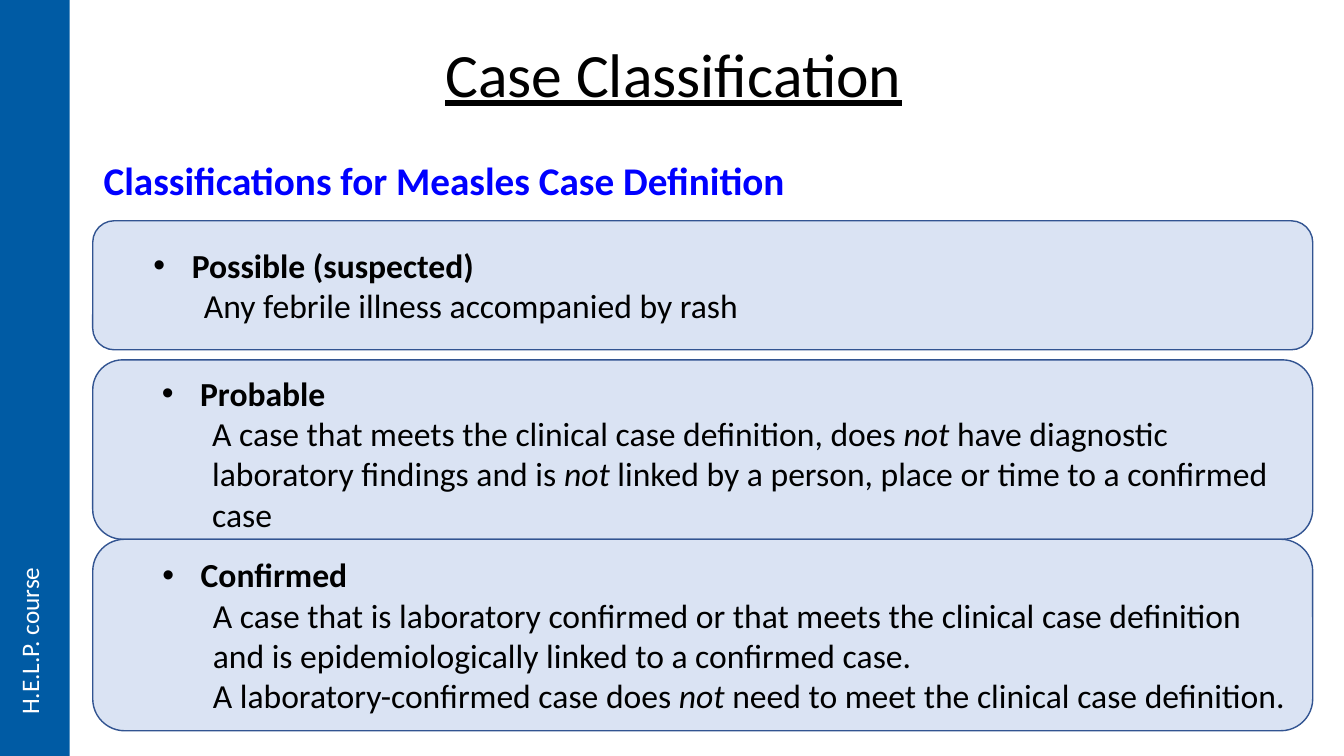
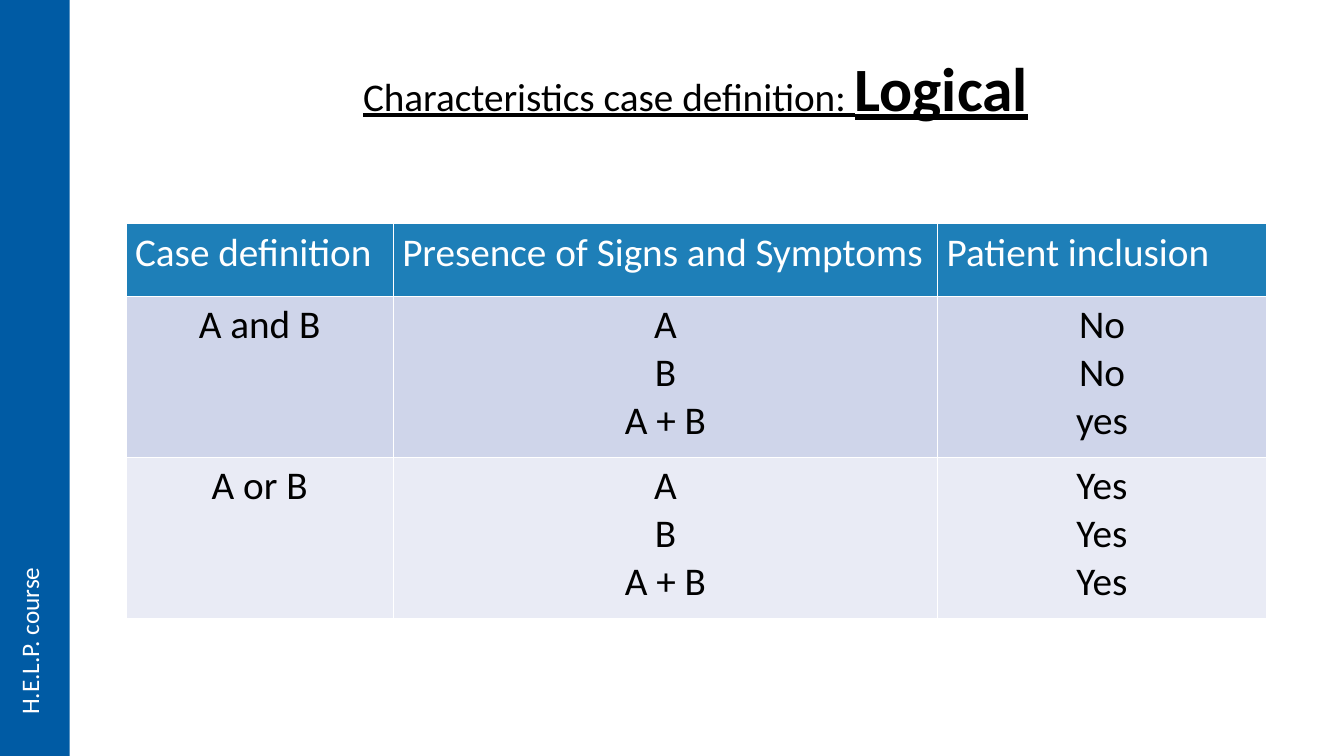
from dataclasses import dataclass

from lxml.etree import SubElement
from pptx import Presentation
from pptx.dml.color import RGBColor
from pptx.enum.shapes import MSO_SHAPE
from pptx.enum.text import MSO_ANCHOR, PP_ALIGN
from pptx.oxml.ns import qn
from pptx.util import Inches, Pt


@dataclass(frozen=True)
class Theme:
    font: str = "Calibri"
    band: str = "005BA4"
    black: str = "000000"
    white: str = "FFFFFF"
    heading: str = "0000FF"
    card: str = "DAE3F3"
    card_line: str = "325491"
    table_header: str = "1E7FB8"
    table_rows: tuple = ("CFD5EA", "E9EBF5")
    title_size: int = 44
    large_size: int = 28
    body_size: int = 24
    course_size: int = 18


class Deck:
    def __init__(self, theme):
        self.theme = theme
        self.deck = Presentation()
        self.deck.slide_width = Inches(13.33)
        self.deck.slide_height = Inches(7.5)
        self.page = None

    # Shared page frame
    def add_page(self):
        self.page = self.deck.slides.add_slide(self.deck.slide_layouts[6])
        band = self.shape(MSO_SHAPE.RECTANGLE, 0, 0, 0.69, 7.5, self.theme.band)
        band.line.fill.background()
        course = self.text_box(0.09, 5.61, 0.5, 1.58, "H.E.L.P. course",
                               self.theme.course_size, self.theme.white)
        course.text_frame._txBody.bodyPr.set("vert", "vert270")

    def style(self, para, size, color, bold=False):
        para.font.name = self.theme.font
        para.font.size = Pt(size)
        para.font.bold = bold
        para.font.color.rgb = RGBColor.from_string(color)

    def shape(self, kind, left, top, width, height, fill):
        shape = self.page.shapes.add_shape(
            kind, Inches(left), Inches(top), Inches(width), Inches(height))
        shape.shadow.inherit = False
        shape.fill.solid()
        shape.fill.fore_color.rgb = RGBColor.from_string(fill)
        return shape

    def text_box(self, left, top, width, height, text, size, color,
                 bold=False, wrap=False):
        box = self.page.shapes.add_textbox(
            Inches(left), Inches(top), Inches(width), Inches(height))
        box.text_frame.word_wrap = wrap
        para = box.text_frame.paragraphs[0]
        para.text = text
        self.style(para, size, color, bold)
        return box

    # Underlined title, with an optional larger bold ending
    def title(self, left, top, text, size, emphasis=""):
        box = self.text_box(left, top, 11.5, 1.45, text, size,
                            self.theme.black, wrap=True)
        box.text_frame.vertical_anchor = MSO_ANCHOR.MIDDLE
        para = box.text_frame.paragraphs[0]
        para.alignment = PP_ALIGN.CENTER
        para.line_spacing = 0.9
        para.font.underline = True
        if emphasis:
            span = para.add_run()
            span.text = emphasis
            span.font.size = Pt(self.theme.title_size)
            span.font.bold = True

    # Rounded card: bulleted term above its definition; *marks* set italics
    def card(self, top, height, term, definitions, margin_left=0.1, margin_top=0.05):
        card = self.shape(MSO_SHAPE.ROUNDED_RECTANGLE, 0.92, top, 12.1, height,
                          self.theme.card)
        card.line.color.rgb = RGBColor.from_string(self.theme.card_line)
        card.line.width = Pt(1)
        frame = card.text_frame
        frame.word_wrap = True
        frame.vertical_anchor = MSO_ANCHOR.MIDDLE
        frame.margin_left = Inches(margin_left)
        frame.margin_top = Inches(margin_top)
        para = frame.paragraphs[0]
        para.text = term
        self.indent(para, 0.88, -0.38, bullet="•")
        self.style(para, self.theme.body_size, self.theme.black, bold=True)
        for definition in definitions:
            para = frame.add_paragraph()
            self.indent(para, 1, 0)
            self.style(para, self.theme.body_size, self.theme.black)
            for index, words in enumerate(definition.split("*")):
                span = para.add_run()
                span.text = words
                if index % 2:
                    span.font.italic = True

    def indent(self, para, margin, first_line, bullet=None):
        para.alignment = PP_ALIGN.LEFT
        properties = para._p.get_or_add_pPr()
        properties.set("marL", str(Inches(margin)))
        properties.set("indent", str(Inches(first_line)))
        if bullet:
            SubElement(properties, qn("a:buFont"), typeface="Arial")
            SubElement(properties, qn("a:buChar"), char=bullet)

    # Table with a coloured header; line breaks separate paragraphs
    def table(self, left, top, widths, heights, rows):
        table = self.page.shapes.add_table(
            len(rows), len(widths), Inches(left), Inches(top),
            Inches(sum(widths)), Inches(sum(heights))).table
        for column, width in zip(table.columns, widths):
            column.width = Inches(width)
        for index, (row, height) in enumerate(zip(rows, heights)):
            table.rows[index].height = Inches(height)
            for cell, text in zip(table.rows[index].cells, row):
                self.cell(cell, text, index)

    def cell(self, cell, text, row):
        theme = self.theme
        if row == 0:
            fill, color, alignment = theme.table_header, theme.white, PP_ALIGN.LEFT
        else:
            fill = theme.table_rows[(row - 1) % 2]
            color, alignment = theme.black, PP_ALIGN.CENTER
        cell.margin_left = cell.margin_right = Inches(0.09)
        cell.margin_top = cell.margin_bottom = Inches(0.05)
        properties = cell._tc.get_or_add_tcPr()
        for side in ("lnL", "lnR", "lnT", "lnB"):
            border = SubElement(properties, qn(f"a:{side}"), w=str(Pt(1)))
            solid = SubElement(border, qn("a:solidFill"))
            SubElement(solid, qn("a:srgbClr"), val=theme.white)
        cell.fill.solid()
        cell.fill.fore_color.rgb = RGBColor.from_string(fill)
        cell.text = text
        for para in cell.text_frame.paragraphs:
            para.alignment = alignment
            self.style(para, theme.large_size, color)


def main():
    theme = Theme()
    deck = Deck(theme)

    # Case classification
    deck.add_page()
    deck.title(0.93, 0.04, "Case Classification", theme.title_size)
    deck.text_box(0.93, 1.5, 7.05, 0.57, "Classifications for Measles Case Definition",
                  theme.large_size, theme.heading, bold=True)
    deck.card(2.19, 1.28, "Possible (suspected)",
              ["Any febrile illness accompanied by rash"], margin_left=0.04)
    deck.card(3.57, 1.78, "Probable",
              ["A case that meets the clinical case definition, does *not* have "
               "diagnostic laboratory findings and is *not* linked by a person, "
               "place or time to a confirmed case"], margin_top=0.12)
    deck.card(5.35, 1.9, "Confirmed",
              ["A case that is laboratory confirmed or that meets the clinical case "
               "definition and is epidemiologically linked to a confirmed case.",
               "A laboratory-confirmed case does *not* need to meet the clinical "
               "case definition."])

    # Logical case definitions
    deck.add_page()
    deck.title(1.15, 0.18, "Characteristics case definition: ", theme.large_size,
               emphasis="Logical")
    signs = "A\nB\nA + B"
    deck.table(1.25, 2.22, (2.65, 5.4, 3.26), (0.72, 1.6, 1.6), (
        ("Case definition", "Presence of Signs and Symptoms", "Patient inclusion"),
        ("A and B", signs, "No\nNo\nyes"),
        ("A or B", signs, "Yes\nYes\nYes"),
    ))

    deck.deck.save("out.pptx")


if __name__ == "__main__":
    main()
